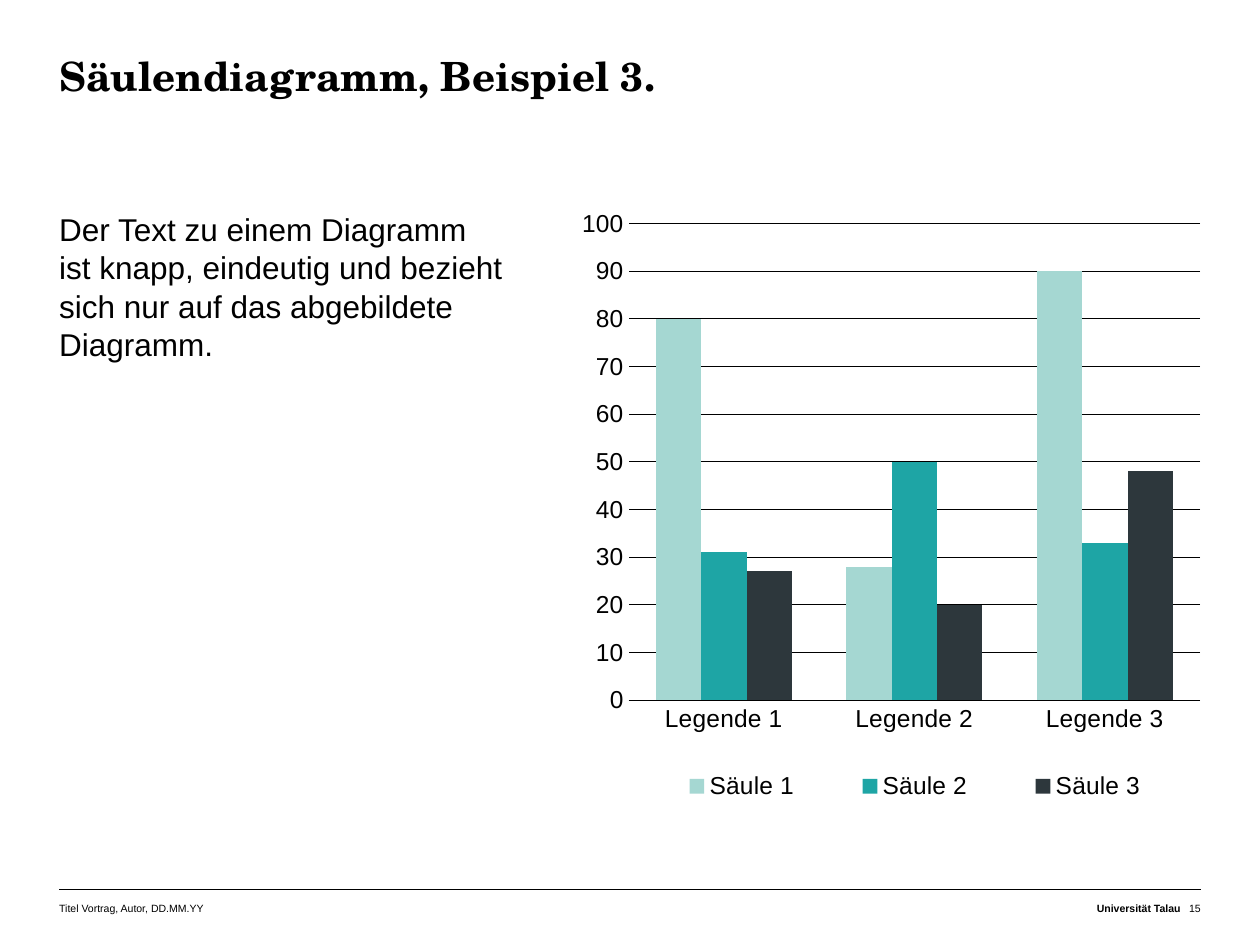
"""Build a slide with a short text beside a clustered column chart."""
from dataclasses import dataclass

from lxml.etree import SubElement
from pptx import Presentation
from pptx.chart.data import CategoryChartData as ChartData
from pptx.dml.color import RGBColor as Color
from pptx.enum.chart import XL_CHART_TYPE as ChartType
from pptx.enum.chart import XL_LEGEND_POSITION as LegendPosition
from pptx.enum.chart import XL_TICK_MARK as TickMark
from pptx.enum.shapes import MSO_CONNECTOR as Connector
from pptx.enum.text import MSO_ANCHOR as Anchor
from pptx.enum.text import MSO_AUTO_SIZE as AutoSize
from pptx.enum.text import PP_ALIGN as Align
from pptx.oxml.ns import qn
from pptx.util import Inches, Pt


@dataclass(frozen=True)
class Theme:
    ink: Color = Color(0x00, 0x00, 0x00)
    title_font: str = "TeX Gyre Schola"
    body_font: str = "Arial"
    title_size: float = 23
    body_size: float = 18
    chart_size: float = 14
    footer_size: float = 6
    title_leading: float = 25
    body_leading: float = 22
    grid_width: float = 0.5
    rule_width: float = 0.25


@dataclass(frozen=True)
class Box:
    left: float
    top: float
    width: float
    height: float

    def lengths(self) -> tuple:
        return tuple(Inches(v) for v in (self.left, self.top, self.width, self.height))


@dataclass(frozen=True)
class FooterPart:
    text: str
    left: float
    width: float
    align: Align = Align.RIGHT
    bold: bool = False


@dataclass(frozen=True)
class ColumnSeries:
    name: str
    values: tuple
    color: Color


THEME = Theme()
MARGIN, RIGHT_EDGE = 0.47, 9.53
RULE_TOP, FOOTER_TOP, FOOTER_HEIGHT = 7.06, 7.14, 0.2
TITLE_BOX = Box(MARGIN, 0.44, RIGHT_EDGE - MARGIN, 0.83)
BODY_BOX = Box(MARGIN, 1.66, 3.66, 3.07)
CHART_BOX = Box(4.49, 1.66, 5.04, 4.76)
PLOT_AREA = Box(0.099, 0.024, 0.9, 0.795)
LEGEND_AREA = Box(0.1, 0.93, 0.9, 0.065)

BODY = (
    ("Der Text zu einem Diagramm ", "ist knapp, eindeutig und bezieht sich nur auf das abgebildete"),
    ("Diagramm.",),
)
FOOTER = (
    FooterPart("Titel Vortrag, Autor, DD.MM.YY", MARGIN, 2.36, Align.LEFT),
    FooterPart("Universität Talau", 7.28, 2.09, bold=True),
    FooterPart("15", 9.37, 0.16),
)
CATEGORIES = ("Legende 1", "Legende 2", "Legende 3")
SERIES = (
    ColumnSeries("Säule 1", (80, 28, 90), Color(0xA5, 0xD7, 0xD2)),
    ColumnSeries("Säule 2", (31, 50, 33), Color(0x1E, 0xA5, 0xA5)),
    ColumnSeries("Säule 3", (27, 20, 48), Color(0x2D, 0x37, 0x3C)),
)


def prepare_frame(frame, inset_top: float = 0) -> None:
    frame.word_wrap = True
    frame.auto_size = AutoSize.NONE
    frame.vertical_anchor = Anchor.TOP
    frame.margin_left = frame.margin_right = frame.margin_bottom = 0
    frame.margin_top = Inches(inset_top)


def style_font(font, size: float, name: str = THEME.body_font, bold: bool = False) -> None:
    font.name, font.size, font.bold = name, Pt(size), bold
    font.color.rgb = THEME.ink


def add_run(paragraph, text: str, size: float, name: str = THEME.body_font, bold: bool = False) -> None:
    run = paragraph.add_run()
    run.text = text
    style_font(run.font, size, name, bold)


def set_title(slide, text: str) -> None:
    title = slide.shapes.title
    title.left, title.top, title.width, title.height = TITLE_BOX.lengths()
    prepare_frame(title.text_frame)
    paragraph = title.text_frame.paragraphs[0]
    paragraph.alignment = Align.LEFT
    paragraph.line_spacing = Pt(THEME.title_leading)
    add_run(paragraph, text, THEME.title_size, THEME.title_font, True)


def add_body(slide) -> None:
    frame = slide.shapes.add_textbox(*BODY_BOX.lengths()).text_frame
    prepare_frame(frame)
    for index, lines in enumerate(BODY):
        paragraph = frame.add_paragraph() if index else frame.paragraphs[0]
        paragraph.line_spacing = Pt(THEME.body_leading)
        for number, line in enumerate(lines):
            if number:
                paragraph.add_line_break()
            add_run(paragraph, line, THEME.body_size)


def add_footer_rule(slide) -> None:
    rule = slide.shapes.add_connector(
        Connector.STRAIGHT, Inches(MARGIN), Inches(RULE_TOP), Inches(RIGHT_EDGE), Inches(RULE_TOP)
    )
    rule.line.color.rgb = THEME.ink
    rule.line.width = Pt(THEME.rule_width)
    SubElement(rule._element.spPr, qn("a:effectLst"))


def add_footer_part(slide, part: FooterPart) -> None:
    box = Box(part.left, FOOTER_TOP, part.width, FOOTER_HEIGHT)
    frame = slide.shapes.add_textbox(*box.lengths()).text_frame
    prepare_frame(frame, 0.02)
    frame.paragraphs[0].alignment = part.align
    add_run(frame.paragraphs[0], part.text, THEME.footer_size, bold=part.bold)


def set_layout(element, area: Box, inner: bool = False) -> None:
    layout = element.get_or_add_layout() if hasattr(element, "get_or_add_layout") else element.find(qn("c:layout"))
    if layout is None:
        layout = SubElement(element, qn("c:layout"))
        element.insert(0, layout)
    for child in list(layout):
        layout.remove(child)
    manual = SubElement(layout, qn("c:manualLayout"))
    settings = [("layoutTarget", "inner")] if inner else []
    settings += [("xMode", "edge"), ("yMode", "edge")]
    settings += [("x", area.left), ("y", area.top), ("w", area.width), ("h", area.height)]
    for tag, value in settings:
        SubElement(manual, qn(f"c:{tag}")).set("val", str(value))


def style_line(line) -> None:
    line.color.rgb = THEME.ink
    line.width = Pt(THEME.grid_width)


def add_column_chart(slide) -> None:
    data = ChartData()
    data.categories = CATEGORIES
    for series in SERIES:
        data.add_series(series.name, series.values)
    chart = slide.shapes.add_chart(ChartType.COLUMN_CLUSTERED, *CHART_BOX.lengths(), data).chart
    chart.has_title = False
    style_font(chart.font, THEME.chart_size)

    plot = chart.plots[0]
    plot.gap_width, plot.overlap, plot.vary_by_categories = 120, 0, False
    for drawn, series in zip(plot.series, SERIES):
        drawn.format.fill.solid()
        drawn.format.fill.fore_color.rgb = series.color
        drawn.format.line.fill.background()

    values, categories = chart.value_axis, chart.category_axis
    for axis in (values, categories):
        axis.major_tick_mark = axis.minor_tick_mark = TickMark.NONE
    values.minimum_scale, values.maximum_scale, values.major_unit = 0, 100, 10
    values.has_major_gridlines = True
    style_line(values.major_gridlines.format.line)
    values.format.line.fill.background()
    style_line(categories.format.line)

    chart.has_legend = True
    chart.legend.position = LegendPosition.BOTTOM
    chart.legend.include_in_layout = False
    set_layout(chart.legend._element, LEGEND_AREA)
    set_layout(chart._chartSpace.chart.plotArea, PLOT_AREA, inner=True)


def main() -> None:
    deck = Presentation()
    deck.slide_width, deck.slide_height = Inches(10), Inches(7.5)
    slide = deck.slides.add_slide(deck.slide_layouts[5])
    add_footer_rule(slide)
    set_title(slide, "Säulendiagramm, Beispiel 3.")
    for part in FOOTER:
        add_footer_part(slide, part)
    add_body(slide)
    add_column_chart(slide)
    deck.save("out.pptx")


if __name__ == "__main__":
    main()
